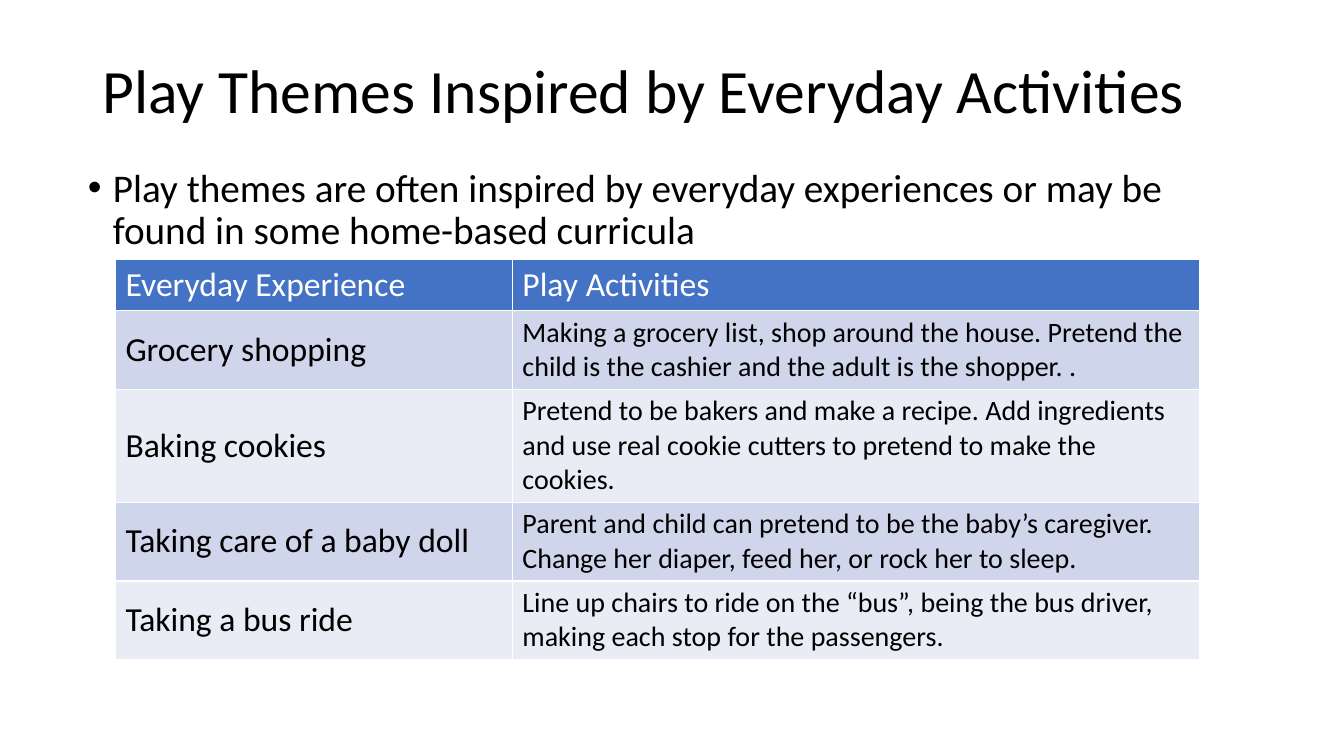
from lxml.etree import SubElement
from pptx import Presentation
from pptx.dml.color import RGBColor
from pptx.enum.text import MSO_ANCHOR, MSO_AUTO_SIZE, PP_ALIGN
from pptx.oxml.ns import qn
from pptx.util import Pt

BLACK = RGBColor(0x00, 0x00, 0x00)
WHITE = RGBColor(0xFF, 0xFF, 0xFF)
HEADER_BLUE = RGBColor(0x44, 0x72, 0xC4)
BAND_DARK = RGBColor(0xCF, 0xD5, 0xEA)
BAND_LIGHT = RGBColor(0xE9, 0xEB, 0xF5)

COLUMN_WIDTHS = [283.5, 491]
ROW_HEIGHTS = [36, 56, 80, 56, 56]
ROWS = [
    ("Everyday Experience", "Play Activities"),
    ("Grocery shopping",
     "Making a grocery list, shop around the house. Pretend the child is "
     "the cashier and the adult is the shopper. ."),
    ("Baking cookies",
     "Pretend to be bakers and make a recipe. Add ingredients and use real "
     "cookie cutters to pretend to make the cookies."),
    ("Taking care of a baby doll",
     "Parent and child can pretend to be the baby’s caregiver. Change her "
     "diaper, feed her, or rock her to sleep."),
    ("Taking a bus ride",
     "Line up chairs to ride on the “bus”, being the bus driver, making "
     "each stop for the passengers."),
]


def place(shape, left, top, width, height):
    shape.left, shape.top = Pt(left), Pt(top)
    shape.width, shape.height = Pt(width), Pt(height)


def format_text(paragraph, size, color):
    for run in paragraph.runs:
        run.font.name = "Calibri"
        run.font.size = Pt(size)
        run.font.bold = False
        run.font.color.rgb = color


presentation = Presentation()
presentation.slide_width = Pt(960)
presentation.slide_height = Pt(540)
slide = presentation.slides.add_slide(presentation.slide_layouts[1])

# Title
title = slide.shapes.title
place(title, 66, 28.75, 828, 75.5)
title.text_frame.text = "Play Themes Inspired by Everyday Activities"
title.text_frame.vertical_anchor = MSO_ANCHOR.MIDDLE
title.text_frame.auto_size = MSO_AUTO_SIZE.NONE
heading = title.text_frame.paragraphs[0]
heading.alignment = PP_ALIGN.LEFT
heading.line_spacing = 0.9
format_text(heading, 44, BLACK)

# Bulleted introduction
body = slide.placeholders[1]
place(body, 55.5, 116.6, 828, 342.7)
body.text_frame.text = ("Play themes are often inspired by everyday experiences "
                        "or may be found in some home-based curricula")
body.text_frame.auto_size = MSO_AUTO_SIZE.NONE
introduction = body.text_frame.paragraphs[0]
introduction.line_spacing = 0.9
introduction.space_before = Pt(0)
properties = introduction._p.get_or_add_pPr()
properties.set("marL", str(Pt(18)))
properties.set("indent", str(Pt(-18)))
SubElement(properties, qn("a:buFont")).set("typeface", "Arial")
SubElement(properties, qn("a:buChar")).set("char", "•")
format_text(introduction, 28, BLACK)

# Table of play themes
frame = slide.shapes.add_table(len(ROWS), len(COLUMN_WIDTHS), Pt(82.5), Pt(185.3),
                               Pt(sum(COLUMN_WIDTHS)), Pt(sum(ROW_HEIGHTS)))
table = frame.table
for column, width in zip(table.columns, COLUMN_WIDTHS):
    column.width = Pt(width)

for row_index, (texts, height) in enumerate(zip(ROWS, ROW_HEIGHTS)):
    table.rows[row_index].height = Pt(height)
    is_header = row_index == 0
    band = BAND_DARK if row_index % 2 else BAND_LIGHT
    for column_index, text in enumerate(texts):
        cell = table.cell(row_index, column_index)
        cell.text_frame.text = text
        cell.fill.solid()
        cell.fill.fore_color.rgb = HEADER_BLUE if is_header else band
        is_label = column_index == 0
        if is_label and not is_header:
            cell.vertical_anchor = MSO_ANCHOR.MIDDLE
        format_text(cell.text_frame.paragraphs[0],
                    24 if is_header or is_label else 20,
                    WHITE if is_header else BLACK)

presentation.save("out.pptx")
